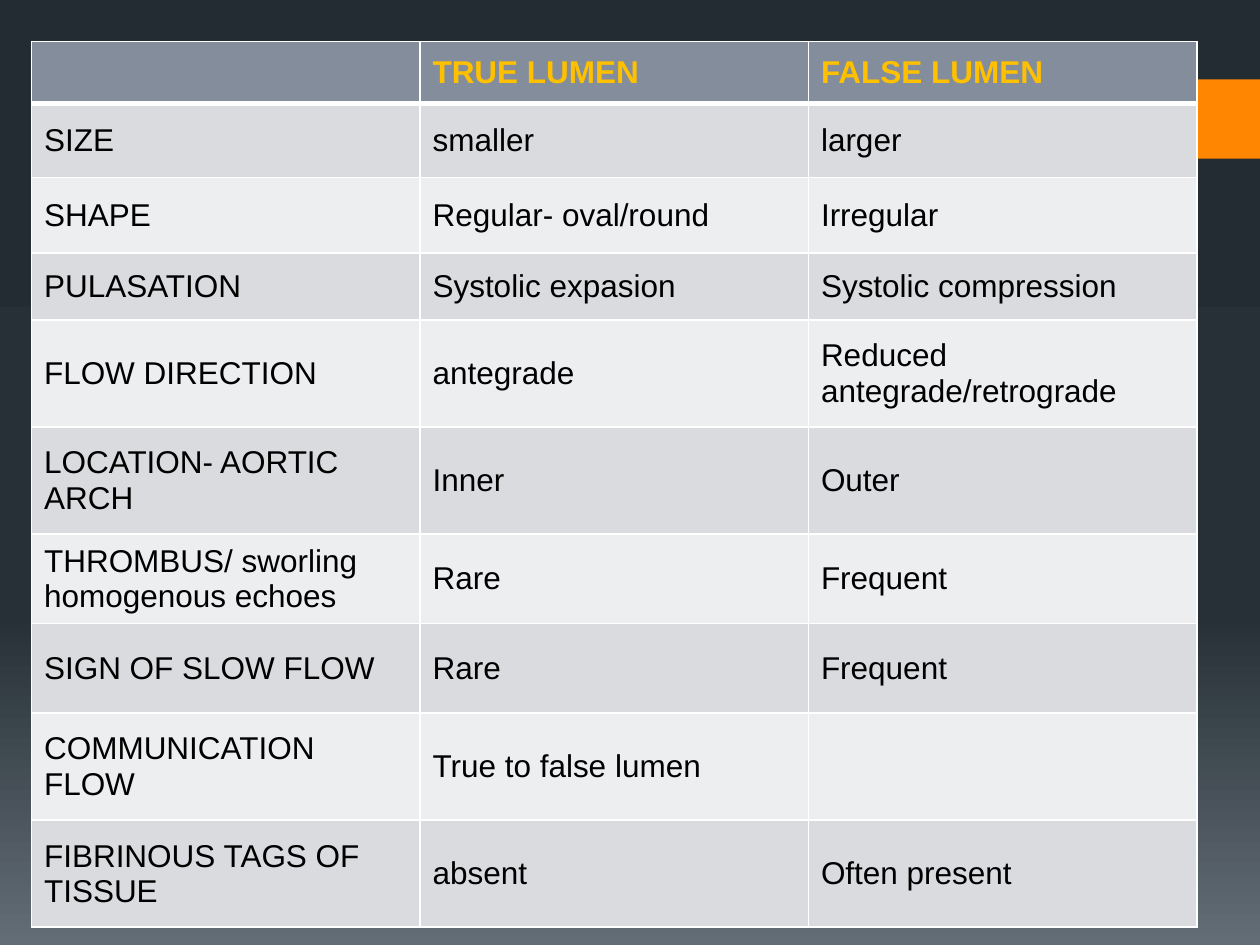
"""Build a slide comparing the true and false lumen in a table."""
from copy import deepcopy

from pptx import Presentation
from pptx.dml.color import RGBColor
from pptx.enum.shapes import MSO_SHAPE
from pptx.enum.text import MSO_ANCHOR
from pptx.oxml import parse_xml
from pptx.oxml.ns import nsdecls, qn
from pptx.util import Inches, Pt

COMPARISON = [
    ("", "TRUE LUMEN", "FALSE LUMEN"),
    ("SIZE", "smaller", "larger"),
    ("SHAPE", "Regular- oval/round", "Irregular"),
    ("PULASATION", "Systolic expasion", "Systolic compression"),
    ("FLOW DIRECTION", "antegrade", "Reduced antegrade/retrograde"),
    ("LOCATION- AORTIC ARCH", "Inner", "Outer"),
    ("THROMBUS/ sworling homogenous echoes", "Rare", "Frequent"),
    ("SIGN OF SLOW FLOW", "Rare", "Frequent"),
    ("COMMUNICATION FLOW", "True to false lumen", ""),
    ("FIBRINOUS TAGS OF TISSUE", "absent", "Often present"),
]
ROW_HEIGHTS = [0.49, 0.59, 0.6, 0.53, 0.85, 0.85, 0.71, 0.71, 0.85, 0.85]
TABLE_LEFT, TABLE_TOP, TABLE_WIDTH = 0.25, 0.33, 9.25
ACCENT_TOP, ACCENT_HEIGHT = 0.63, 0.63
ACCENT_BARS = [(9.22, 0.09), (9.37, 0.63)]

ORANGE = RGBColor(0xFF, 0x86, 0x00)
GOLD = RGBColor(0xFF, 0xC0, 0x00)
BLACK = RGBColor(0x00, 0x00, 0x00)
WHITE = RGBColor(0xFF, 0xFF, 0xFF)
HEADER_FILL = RGBColor(0x83, 0x8D, 0x9B)
BAND_FILLS = [RGBColor(0xED, 0xEE, 0xEF), RGBColor(0xD9, 0xDB, 0xDE)]
BACKGROUND_STOPS = [
    (0, RGBColor(0x24, 0x2C, 0x33)),
    (0.65, RGBColor(0x27, 0x30, 0x37)),
    (1, RGBColor(0x63, 0x6D, 0x76)),
]


def paint_background(slide):
    fill = slide.background.fill
    fill.gradient()
    fill.gradient_angle = 270
    stop_list = slide.element.find(".//" + qn("a:gsLst"))
    stop_list.append(deepcopy(stop_list[-1]))
    for stop, (position, color) in zip(fill.gradient_stops, BACKGROUND_STOPS):
        stop.position = position
        stop.color.rgb = color


def add_accent_bars(slide):
    for left, width in ACCENT_BARS:
        bar = slide.shapes.add_shape(
            MSO_SHAPE.RECTANGLE, Inches(left), Inches(ACCENT_TOP),
            Inches(width), Inches(ACCENT_HEIGHT))
        bar.shadow.inherit = False
        bar.fill.solid()
        bar.fill.fore_color.rgb = ORANGE
        bar.line.fill.background()


def set_borders(cell, top, bottom):
    properties = cell._tc.get_or_add_tcPr()
    widths = {"lnL": 1, "lnR": 1, "lnT": top, "lnB": bottom}
    for index, (side, width) in enumerate(widths.items()):
        properties.insert(index, parse_xml(
            f'<a:{side} {nsdecls("a")} w="{Pt(width)}"><a:solidFill>'
            f'<a:srgbClr val="{WHITE}"/></a:solidFill></a:{side}>'))


def format_cell(cell, text, row_index):
    is_header = row_index == 0
    cell.text = text
    cell.vertical_anchor = MSO_ANCHOR.MIDDLE
    cell.fill.solid()
    cell.fill.fore_color.rgb = HEADER_FILL if is_header else BAND_FILLS[row_index % 2]
    set_borders(cell, 3 if row_index == 1 else 1, 3 if is_header else 1)
    font = cell.text_frame.paragraphs[0].font
    if text:
        font = cell.text_frame.paragraphs[0].runs[0].font
    font.name = "Arial"
    font.size = Pt(18)
    font.bold = is_header
    font.color.rgb = GOLD if is_header else BLACK


def add_comparison_table(slide):
    column_count = len(COMPARISON[0])
    table = slide.shapes.add_table(
        len(COMPARISON), column_count, Inches(TABLE_LEFT), Inches(TABLE_TOP),
        Inches(TABLE_WIDTH), Inches(sum(ROW_HEIGHTS))).table
    for column in table.columns:
        column.width = Inches(TABLE_WIDTH / column_count)
    for row_index, (texts, height) in enumerate(zip(COMPARISON, ROW_HEIGHTS)):
        table.rows[row_index].height = Inches(height)
        for column_index, text in enumerate(texts):
            format_cell(table.cell(row_index, column_index), text, row_index)


def main():
    presentation = Presentation()
    presentation.slide_width = Inches(10)
    presentation.slide_height = Inches(7.5)
    slide = presentation.slides.add_slide(presentation.slide_layouts[6])
    paint_background(slide)
    add_accent_bars(slide)
    add_comparison_table(slide)
    presentation.save("out.pptx")


if __name__ == "__main__":
    main()
